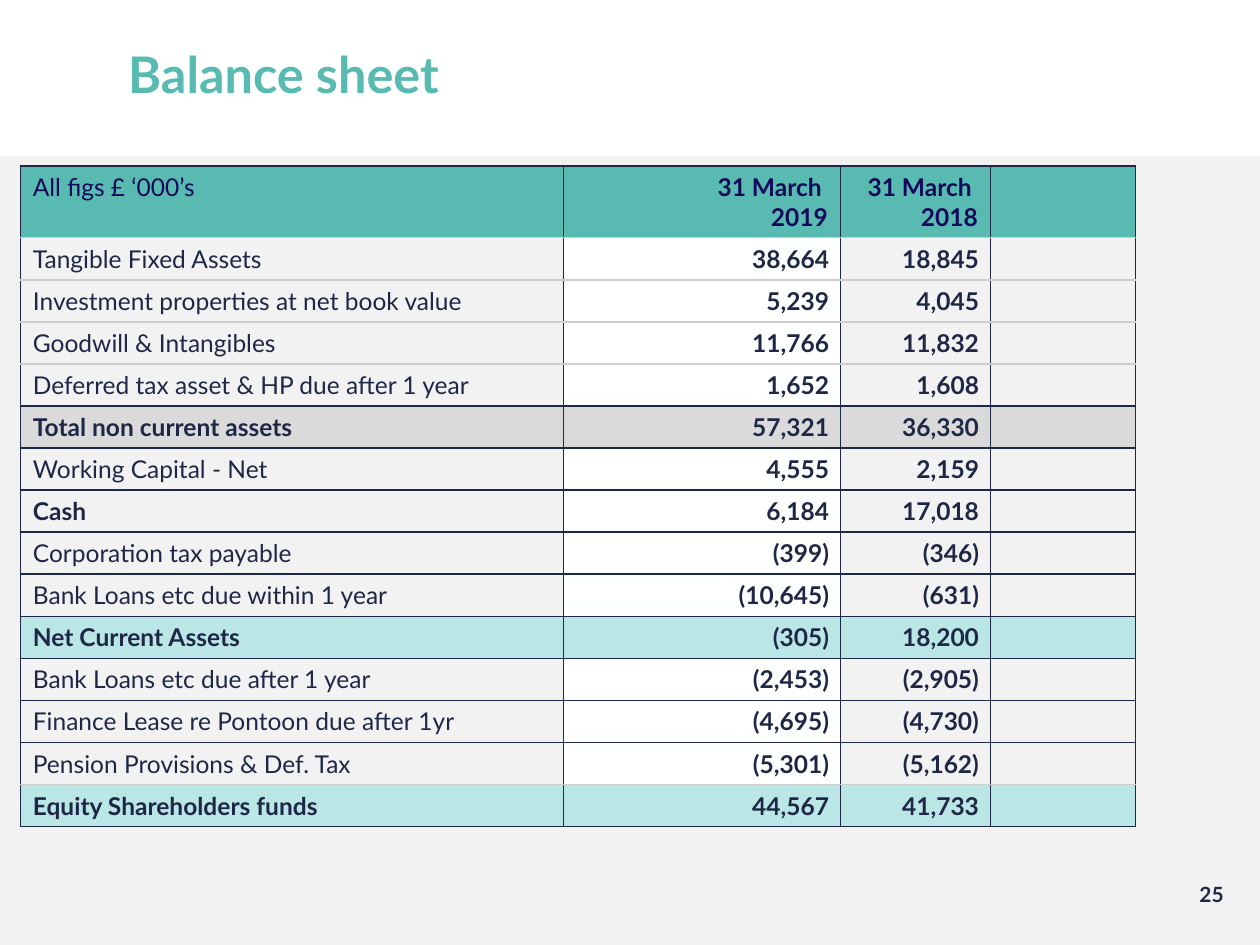
"""Build a slide with a balance sheet table."""
import lxml.etree
import pptx
import pptx.dml.color
import pptx.enum.shapes
import pptx.enum.text
import pptx.oxml.ns
import pptx.util

Pt = pptx.util.Pt
ALIGN = pptx.enum.text.PP_ALIGN
ANCHOR = pptx.enum.text.MSO_ANCHOR
HUES = {
    "page": "F2F2F2", "white": "FEFFFF", "teal": "58BAB1", "mint": "BAE6E5",
    "grey": "DADADA", "ink": "1E2746", "navy": "13095B", "pale": "CECECE",
}


def tint(name):
    return pptx.dml.color.RGBColor.from_string(HUES[name])


def write(frame, words, size=14, hue="ink", bold=False, align=ALIGN.LEFT):
    frame.word_wrap = True
    for i, line in enumerate(words.split("\n")):
        para = frame.paragraphs[0] if i == 0 else frame.add_paragraph()
        para.alignment = align
        run = para.add_run()
        run.text = line
        run.font.name = "Lato"
        run.font.size = Pt(size)
        run.font.bold = bold
        run.font.color.rgb = tint(hue)


deck = pptx.Presentation()
deck.slide_width, deck.slide_height = Pt(720), Pt(540)
slide = deck.slides.add_slide(deck.slide_layouts[6])
slide.background.fill.solid()
slide.background.fill.fore_color.rgb = tint("page")

band = slide.shapes.add_shape(
    pptx.enum.shapes.MSO_SHAPE.RECTANGLE, 0, 0, Pt(720), Pt(89.3))
band.shadow.inherit = False
band.fill.solid()
band.fill.fore_color.rgb = tint("white")
band.line.fill.background()

number = slide.shapes.add_textbox(Pt(538.6), Pt(500.4), Pt(167.8), Pt(28.8))
write(number.text_frame, "25", size=12, bold=True, align=ALIGN.RIGHT)

title = slide.shapes.add_textbox(Pt(66.2), Pt(23.8), Pt(617.8), Pt(36.7))
title.text_frame.vertical_anchor = ANCHOR.MIDDLE
write(title.text_frame, "Balance sheet", size=28.8, hue="teal", bold=True)

rows = [
    ("All figs £ ‘000’s", "31 March \n2019", "31 March \n2018"),
    ("Tangible Fixed Assets", "38,664", "18,845"),
    ("Investment properties at net book value", "5,239", "4,045"),
    ("Goodwill & Intangibles", "11,766", "11,832"),
    ("Deferred tax asset & HP due after 1 year", "1,652", "1,608"),
    ("Total non current assets", "57,321", "36,330"),
    ("Working Capital - Net", "4,555", "2,159"),
    ("Cash", "6,184", "17,018"),
    ("Corporation tax payable", "(399)", "(346)"),
    ("Bank Loans etc due within 1 year", "(10,645)", "(631)"),
    ("Net Current Assets", "(305)", "18,200"),
    ("Bank Loans etc due after 1 year", "(2,453)", "(2,905)"),
    ("Finance Lease re Pontoon due after 1yr", "(4,695)", "(4,730)"),
    ("Pension Provisions & Def. Tax", "(5,301)", "(5,162)"),
    ("Equity Shareholders funds", "44,567", "41,733"),
]
fills = {0: "teal", 5: "grey", 10: "mint", 14: "mint"}
strong = {5, 7, 10, 14}
soft = {0, 1, 2, 3, 13}
widths = [310.3, 158.4, 85.7, 82.8]

table = slide.shapes.add_table(
    len(rows), len(widths), Pt(11.6), Pt(95), Pt(sum(widths)), Pt(376.6)).table
table.first_row = table.horz_banding = False
for col, width in zip(table.columns, widths):
    col.width = Pt(width)

for r, row in enumerate(rows):
    table.rows[r].height = Pt(24 if r else 40.6)
    for c, words in enumerate(row + ("",)):
        cell = table.cell(r, c)
        edges = {
            "lnL": "ink", "lnR": "ink",
            "lnT": "pale" if r - 1 in soft else "ink",
            "lnB": "pale" if r in soft else "ink",
        }
        props = cell._tc.get_or_add_tcPr()
        for edge, hue in edges.items():
            line = lxml.etree.SubElement(
                props, pptx.oxml.ns.qn("a:" + edge), w=str(Pt(1)))
            solid = lxml.etree.SubElement(line, pptx.oxml.ns.qn("a:solidFill"))
            lxml.etree.SubElement(
                solid, pptx.oxml.ns.qn("a:srgbClr"), val=HUES[hue])

        fill = fills.get(r, "white" if c == 1 else None)
        if fill:
            cell.fill.solid()
            cell.fill.fore_color.rgb = tint(fill)
        else:
            cell.fill.background()

        if c == 3 or (r and c):
            cell.margin_left = cell.margin_top = cell.margin_bottom = 0
            cell.margin_right = Pt(6.5)
            cell.vertical_anchor = ANCHOR.MIDDLE
        elif r:
            cell.vertical_anchor = ANCHOR.BOTTOM
        if words:
            write(cell.text_frame, words, hue="ink" if r else "navy",
                  bold=c > 0 or r in strong,
                  align=ALIGN.RIGHT if c else ALIGN.LEFT)

deck.save("out.pptx")
